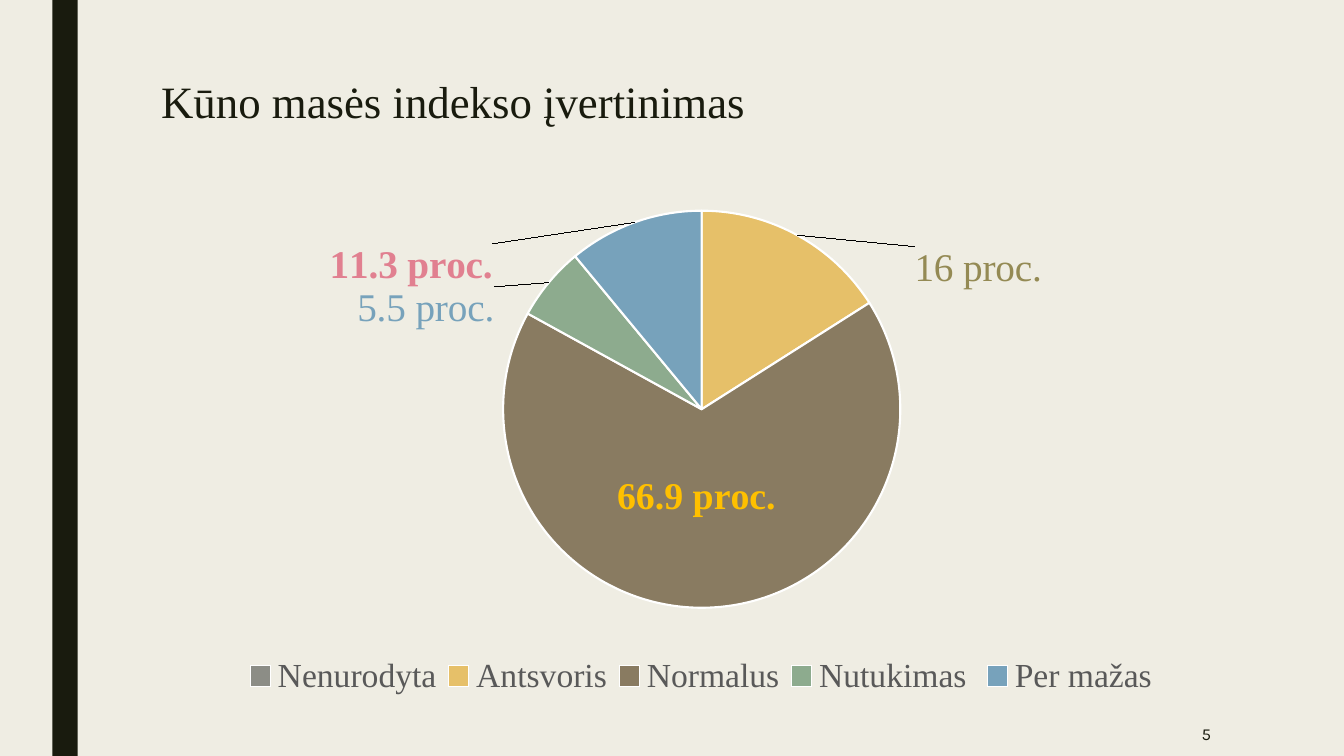
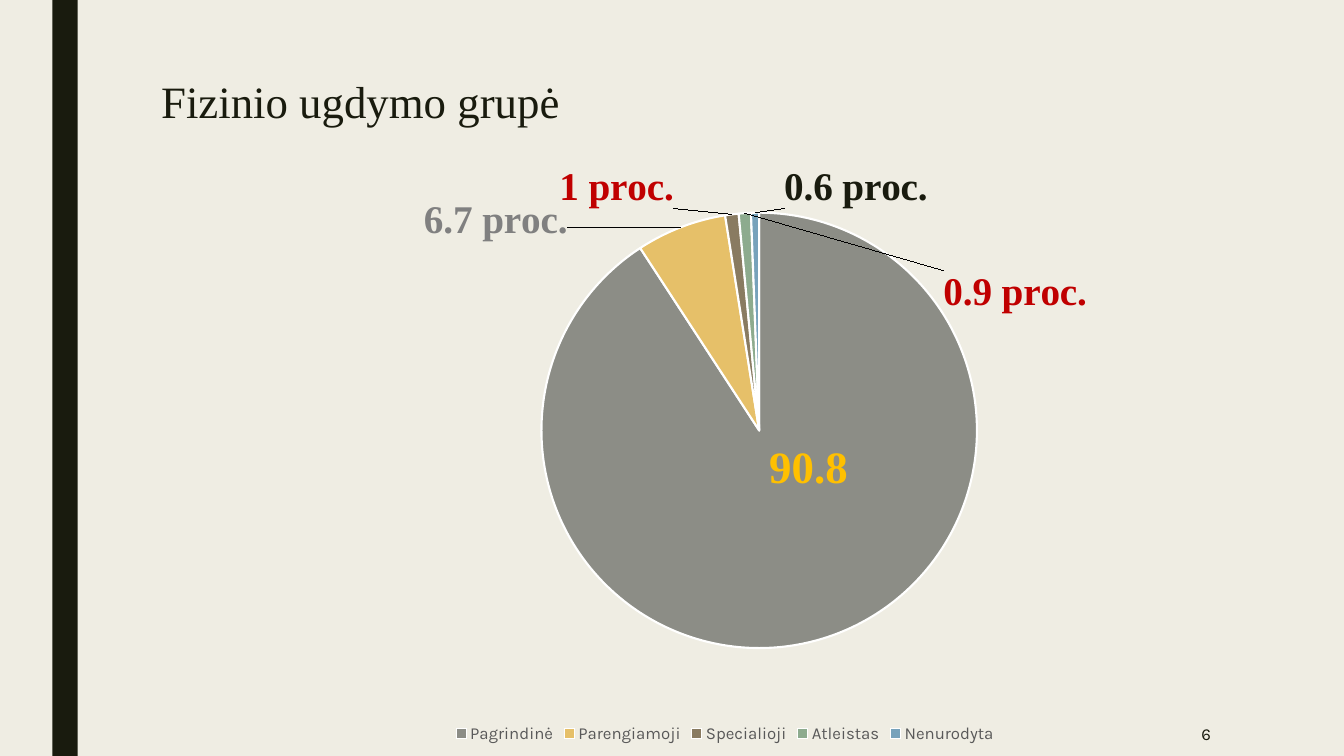
import pptx
import pptx.chart.data
import pptx.dml.color
import pptx.enum.chart
import pptx.enum.shapes
import pptx.enum.text
import pptx.oxml
import pptx.oxml.ns
import pptx.util
from dataclasses import dataclass

Inches = pptx.util.Inches
Place = pptx.enum.chart.XL_LABEL_POSITION


@dataclass(frozen=True)
class Theme:
    paper: str = "EFEDE3"
    ink: str = "191B0E"
    grey: str = "595959"
    white: str = "FFFFFF"
    gold: str = "FFC000"
    black: str = "000000"
    red: str = "FF0000"
    wine: str = "C00000"
    sky: str = "77A2BB"
    slices: tuple = ("8C8D86", "E6C069", "897B61", "8DAB8E", "77A2BB")
    serif: str = "Times New Roman"
    sans: str = "Karla"
    title: int = 32
    label: int = 28
    note: int = 12


T = Theme()

# Lengths are inches. Label shifts and legend boxes are percent of the chart.
SLIDES = [
    {
        "title": "Kūno masės indekso įvertinimas",
        "number": "5",
        "frame": (1.5, 1.54, 10.5, 5.69),
        "center": (6.96, 4.06),
        "radius": 1.97,
        "legend": {"size": 24, "font": T.serif, "box": (8.2, 86.3, 87.5, 9)},
        "data": [("Nenurodyta", 0), ("Antsvoris", 16), ("Normalus", 67),
                 ("Nutukimas ", 6), ("Per mažas", 11)],
        "labels": {
            1: {"text": "16 proc.", "color": "948A54", "bold": False,
                "shift": (10.8, 10.4)},
            2: {"text": "66.9 proc.", "color": T.gold, "size": 27,
                "inside": True, "shift": (-0.8, -2.1)},
            3: {"text": "5.5 proc.", "color": T.sky, "bold": False,
                "leader": T.sky, "shift": (-4.7, 8.9)},
            4: {"text": "11.3 proc.", "color": "E18090",
                "shift": (-13.2, 12.2)},
        },
    },
    {
        "title": "Fizinio ugdymo grupė",
        "number": "6",
        "frame": (1.5, 1.49, 11.38, 5.93),
        "center": (7.53, 4.27),
        "radius": 2.16,
        "legend": {"size": T.note, "font": T.sans},
        "data": [("Pagrindinė", 90.8), ("Parengiamoji", 6.7),
                 ("Specialioji", 1), ("Atleistas", 0.9),
                 ("Nenurodyta", 0.6)],
        "labels": {
            0: {"color": T.gold, "leader": T.gold, "size": 32,
                "inside": True, "shift": (1.6, -11.2)},
            1: {"text": "6.7 proc.", "color": "808080", "leader": "404040",
                "shift": (-9.7, 3.4)},
            2: {"text": "1 proc.", "color": T.wine, "leader": T.red,
                "shift": (-5, 0)},
            3: {"text": "0.9 proc.", "color": T.wine, "leader": T.red,
                "shift": (23.6, 17.8)},
            4: {"text": "0.6 proc.", "color": T.ink, "leader": T.red,
                "shift": (8.8, 0.3)},
        },
    },
]


def rgb(code):
    return pptx.dml.color.RGBColor.from_string(code)


def style(font, size, name, color, bold=False):
    font.size = pptx.util.Pt(size)
    font.name = name
    font.bold = bold
    font.color.rgb = rgb(color)


def add_text(slide, text, box, size, name):
    shape = slide.shapes.add_textbox(*map(Inches, box))
    shape.text_frame.word_wrap = True
    line = shape.text_frame.paragraphs[0]
    line.text = text
    style(line.font, size, name, T.ink)
    return shape.text_frame, line


def add_frame(slide, page):
    """Add the side band, title and page number."""
    band = slide.shapes.add_shape(pptx.enum.shapes.MSO_SHAPE.RECTANGLE,
                                  *map(Inches, (0.52, 0, 0.25, 7.5)))
    band.shadow.inherit = False
    band.fill.solid()
    band.fill.fore_color.rgb = rgb(T.ink)
    band.line.fill.background()

    title = add_text(slide, page["title"], (1.5, 0.75, 10.5, 0.75),
                     T.title, T.serif)[1]
    title.line_spacing = 0.89

    body, line = add_text(slide, page["number"], (10.36, 7.06, 1.75, 0.44),
                          T.note, T.sans)
    body.vertical_anchor = pptx.enum.text.MSO_ANCHOR.MIDDLE
    line.alignment = pptx.enum.text.PP_ALIGN.RIGHT


def set_layout(parent, index, **values):
    """Give a chart part a manual layout as its child at the index."""
    for old in parent.findall(pptx.oxml.ns.qn("c:layout")):
        parent.remove(old)
    tags = "".join(f'<c:{key} val="{val}"/>' for key, val in values.items())
    parent.insert(index, pptx.oxml.parse_xml(
        f'<c:layout {pptx.oxml.ns.nsdecls("c")}>'
        f"<c:manualLayout>{tags}</c:manualLayout></c:layout>"))


def place_pie(chart, page):
    left, top, width, height = page["frame"]
    x, y = page["center"]
    r = page["radius"]
    plot = chart.element.xpath(".//c:plotArea")[0]
    set_layout(plot, 0, layoutTarget="inner", xMode="edge", yMode="edge",
               x=round((x - r - left) / width, 4),
               y=round((y - r - top) / height, 4),
               w=round(2 * r / width, 4), h=round(2 * r / height, 4))


def add_legend(chart, look):
    chart.has_legend = True
    legend = chart.legend
    legend.position = pptx.enum.chart.XL_LEGEND_POSITION.BOTTOM
    legend.include_in_layout = False
    style(legend.font, look["size"], look["font"], T.grey)
    if "box" in look:
        x, y, w, h = (round(part / 100, 4) for part in look["box"])
        set_layout(chart.element.xpath(".//c:legend")[0], 1,
                   xMode="edge", yMode="edge", x=x, y=y, w=w, h=h)


def add_label(chart, series, index, spec):
    """Label one slice; the label's base font also colours its leader."""
    size = spec.get("size", T.label)
    bold = spec.get("bold", True)
    label = series.points[index].data_label
    if "text" in spec:
        run = label.text_frame.paragraphs[0].add_run()
        run.text = spec["text"]
        style(run.font, size, T.serif, spec["color"], bold)
    style(label.font, size, T.serif, spec.get("leader", T.black), bold)
    inside = spec.get("inside", False)
    label.position = Place.CENTER if inside else Place.OUTSIDE_END
    node = chart.element.xpath(f".//c:dLbl[c:idx/@val='{index}']")[0]
    for body in node.xpath(".//a:bodyPr"):
        body.set("wrap", "none")
    x, y = spec["shift"]
    set_layout(node, 1, x=round(x / 100, 4), y=round(y / 100, 4))


def add_pie(slide, page):
    names, values = zip(*page["data"])
    data = pptx.chart.data.CategoryChartData()
    data.categories = names
    data.add_series("Series 1", values)
    chart = slide.shapes.add_chart(pptx.enum.chart.XL_CHART_TYPE.PIE,
                                   *map(Inches, page["frame"]), data).chart
    chart.has_title = False
    style(chart.font, 10, T.sans, T.black)
    plot = chart.plots[0]
    plot.vary_by_categories = True
    series = plot.series[0]
    for index, color in enumerate(T.slices):
        look = series.points[index].format
        look.fill.solid()
        look.fill.fore_color.rgb = rgb(color)
        look.line.color.rgb = rgb(T.white)
        look.line.width = pptx.util.Pt(1.5)
    series.data_labels.show_value = False
    for index, spec in page["labels"].items():
        add_label(chart, series, index, spec)
    add_legend(chart, page["legend"])
    place_pie(chart, page)


def main():
    deck = pptx.Presentation()
    deck.slide_width, deck.slide_height = Inches(13.33), Inches(7.5)
    back = deck.slide_master.background.fill
    back.solid()
    back.fore_color.rgb = rgb(T.paper)
    for page in SLIDES:
        slide = deck.slides.add_slide(deck.slide_layouts[6])
        add_frame(slide, page)
        add_pie(slide, page)
    deck.save("out.pptx")


if __name__ == "__main__":
    main()
